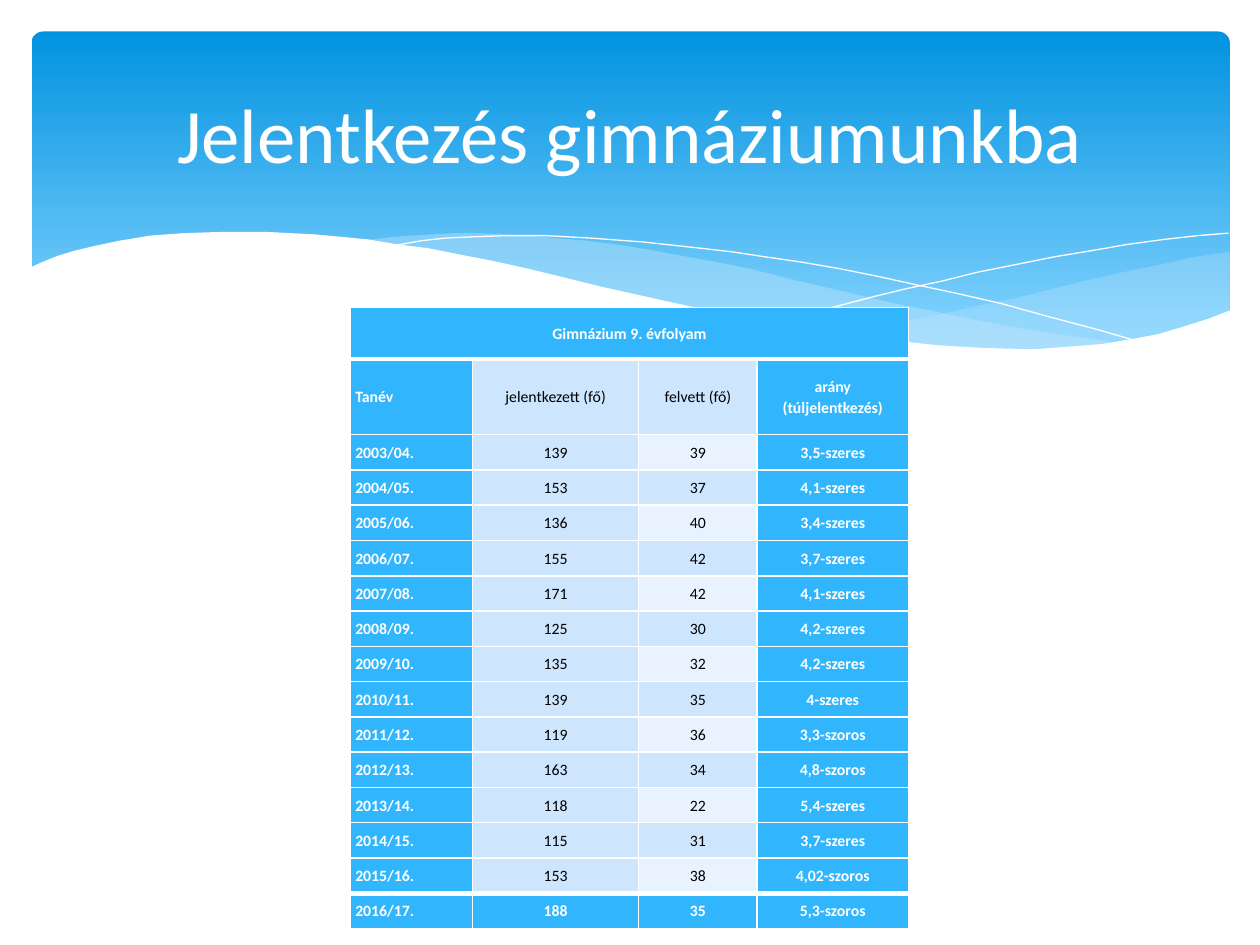
from lxml.etree import SubElement
from pptx import Presentation
from pptx.dml.color import RGBColor
from pptx.enum.shapes import MSO_SHAPE as SHAPE
from pptx.enum.text import MSO_ANCHOR as ANCHOR, PP_ALIGN as ALIGN
from pptx.oxml import parse_xml
from pptx.oxml.ns import nsdecls, qn
from pptx.util import Inches, Pt

COLORS = {
    "white": "FFFFFF", "black": "000000", "deep": "0293E0", "sky": "83D3FE",
    "wave": "C6E7FC", "accent": "31B6FD", "band": "CEE5FE", "pale": "E8F3FF",
}


def rgb(name):
    return RGBColor.from_string(COLORS[name])


def style_text(paragraph, align, color, **font_format):
    paragraph.alignment = align
    for run in paragraph.runs:
        run.font.color.rgb = rgb(color)
        for attribute, value in font_format.items():
            setattr(run.font, attribute, value)


prs = Presentation()
prs.slide_width, prs.slide_height = Inches(10), Inches(7.5)
slide = prs.slides.add_slide(prs.slide_layouts[5])

banner = slide.shapes.add_shape(SHAPE.ROUNDED_RECTANGLE, Inches(0.25), Inches(0.25), Inches(9.51), Inches(2.7))
banner.adjustments[0] = 0.034
banner.shadow.inherit = False
banner.line.fill.background()
banner.fill.gradient()
banner.fill.gradient_angle = 270
for stop, (position, color) in zip(banner.fill.gradient_stops, [(0, "deep"), (0.9, "sky")]):
    stop.position = position
    stop.color.rgb = rgb(color)

right_wave = [
    (9.75, 2), (9.48, 2.04), (9.21, 2.1), (8.91, 2.16), (8.61, 2.23), (8.32, 2.3), (8.05, 2.37),
    (7.79, 2.42), (7.53, 2.48), (7.29, 2.53), (7.06, 2.57), (6.83, 2.62), (6.61, 2.65), (6.91, 2.69),
    (7.19, 2.72), (7.45, 2.75), (7.69, 2.77), (8.03, 2.78), (8.35, 2.77), (8.63, 2.75), (8.81, 2.73),
    (8.97, 2.7), (9.13, 2.67), (9.28, 2.63), (9.42, 2.59), (9.63, 2.52), (9.76, 2.47), (9.76, 2),
]
middle_wave = [
    (8.93, 2.73), (8.66, 2.69), (8.37, 2.65), (8.07, 2.6), (7.75, 2.54), (7.41, 2.47), (7.06, 2.4),
    (6.68, 2.31), (6.29, 2.22), (5.98, 2.14), (5.69, 2.08), (5.41, 2.03), (5.14, 1.98), (4.89, 1.94),
    (4.65, 1.91), (4.42, 1.89), (4.2, 1.87), (3.99, 1.86), (3.8, 1.85), (3.61, 1.85), (3.44, 1.86),
    (3.28, 1.87), (3.13, 1.88), (2.86, 1.91), (3.23, 1.96), (3.62, 2.03), (4.04, 2.11), (4.49, 2.22),
    (4.91, 2.32), (5.3, 2.4), (5.66, 2.48), (6.01, 2.55), (6.34, 2.61), (6.65, 2.66), (6.95, 2.7),
    (7.22, 2.74), (7.48, 2.76), (7.73, 2.77), (7.96, 2.78), (8.38, 2.78), (8.67, 2.76), (8.84, 2.74),
]
falling_line = [
    (3.09, 1.95), (3.18, 1.94), (3.35, 1.91), (3.53, 1.89), (3.74, 1.88), (4.01, 1.87), (4.33, 1.87),
    (4.69, 1.89), (5.1, 1.92), (5.56, 1.97), (5.82, 2), (6.08, 2.04), (6.36, 2.08), (6.65, 2.13),
    (6.95, 2.19), (7.27, 2.26), (7.6, 2.33), (7.95, 2.41), (8.31, 2.51), (8.69, 2.61), (9.07, 2.72),
]
rising_line = [
    (6.13, 2.57), (6.53, 2.46), (6.95, 2.35), (7.2, 2.29), (7.48, 2.23), (7.76, 2.16), (8.06, 2.1),
    (8.36, 2.04), (8.66, 1.99), (8.95, 1.94), (9.24, 1.9), (9.51, 1.87), (9.75, 1.85),
]
white_wave = [
    (9.77, 2.46), (9.59, 2.53), (9.4, 2.59), (9.2, 2.65), (8.99, 2.69), (8.75, 2.73), (8.5, 2.75),
    (8.23, 2.77), (8.09, 2.77), (7.78, 2.76), (7.44, 2.74), (7.08, 2.7), (6.68, 2.65), (6.26, 2.58),
    (5.79, 2.5), (5.29, 2.39), (4.75, 2.27), (4.47, 2.2), (4.18, 2.13), (3.91, 2.07), (3.65, 2.02),
    (3.4, 1.97), (3.16, 1.94), (2.92, 1.9), (2.71, 1.88), (2.5, 1.86), (2.3, 1.85), (2.11, 1.84),
    (1.77, 1.84), (1.46, 1.85), (1.19, 1.87), (0.95, 1.91), (0.76, 1.95), (0.59, 1.99), (0.46, 2.03),
    (0.36, 2.07), (0.29, 2.1), (0.23, 2.13), (0.23, 3.29), (9.77, 3.29),
]
for points, color, opacity in [
    (right_wave, "wave", 29), (middle_wave, "wave", 40),
    (falling_line, None, None), (rising_line, None, None), (white_wave, "white", 100),
]:
    start, *rest = [(Inches(x), Inches(y)) for x, y in points]
    builder = slide.shapes.build_freeform(*start)
    builder.add_line_segments(rest, close=color is not None)
    curve = builder.convert_to_shape()
    curve.shadow.inherit = False
    if color:
        curve.line.fill.background()
        curve.fill.solid()
        curve.fill.fore_color.rgb = rgb(color)
        tint = curve.element.spPr.find(f"{qn('a:solidFill')}/{qn('a:srgbClr')}")
        SubElement(tint, qn("a:alpha"), val=str(opacity * 1000))
    else:
        curve.fill.background()
        curve.line.color.rgb = rgb("white")
        curve.line.width = Pt(0)

title = slide.shapes.title
title.element.getparent().append(title.element)
title.left, title.top, title.width, title.height = Inches(0.5), Inches(0.37), Inches(9), Inches(1.37)
title.text_frame.text = "Jelentkezés gimnáziumunkba"
title.text_frame.vertical_anchor = ANCHOR.MIDDLE
style_text(title.text_frame.paragraphs[0], ALIGN.CENTER, "white", name="Calibri", size=Pt(44))

rows = [
    ("Gimnázium 9. évfolyam", "", "", ""),
    ("Tanév", "jelentkezett (fő)", "felvett (fő)", "arány\n(túljelentkezés)"),
    ("2003/04.", "139", "39", "3,5-szeres"),
    ("2004/05.", "153", "37", "4,1-szeres"),
    ("2005/06.", "136", "40", "3,4-szeres"),
    ("2006/07.", "155", "42", "3,7-szeres"),
    ("2007/08.", "171", "42", "4,1-szeres"),
    ("2008/09.", "125", "30", "4,2-szeres"),
    ("2009/10.", "135", "32", "4,2-szeres"),
    ("2010/11.", "139", "35", "4-szeres"),
    ("2011/12.", "119", "36", "3,3-szoros"),
    ("2012/13.", "163", "34", "4,8-szoros"),
    ("2013/14.", "118", "22", "5,4-szeres"),
    ("2014/15.", "115", "31", "3,7-szeres"),
    ("2015/16.", "153", "38", "4,02-szoros"),
    ("2016/17.", "188", "35", "5,3-szoros"),
]
last = len(rows) - 1
admissions = slide.shapes.add_table(
    len(rows), 4, Inches(2.78), Inches(2.44), Inches(4.42), Inches(4.94)
).table
admissions.horz_banding = False
for column, width in zip(admissions.columns, [0.97, 1.32, 0.94, 1.2]):
    column.width = Inches(width)
for row, height in zip(admissions.rows, [0.41, 0.6] + [0.28] * (last - 1)):
    row.height = Inches(height)
admissions.cell(0, 0).merge(admissions.cell(0, 3))

cell_format = {
    "margin_left": Inches(0.04), "margin_right": Inches(0.04),
    "margin_top": 0, "margin_bottom": 0, "vertical_anchor": ANCHOR.MIDDLE,
}
for r, texts in enumerate(rows):
    for c, text in enumerate(texts):
        cell = admissions.cell(r, c)
        for attribute, value in cell_format.items():
            setattr(cell, attribute, value)
        strong = r in (0, last) or c in (0, 3)
        pale = c == 2 and r > 1 and r % 2 == 0
        cell.fill.solid()
        cell.fill.fore_color.rgb = rgb("accent" if strong else "pale" if pale else "band")
        if text:
            cell.text = text
        align = ALIGN.LEFT if c == 0 and r > 0 else ALIGN.CENTER
        for paragraph in cell.text_frame.paragraphs:
            paragraph.line_spacing = 1.07
            style_text(paragraph, align, "white" if strong else "black",
                       name="Calibri", size=Pt(9), bold=strong)
        top = 3 if r in (1, last) else 1
        bottom = 3 if r in (0, last - 1) else 1
        for i, (side, weight) in enumerate([("L", 1), ("R", 1), ("T", top), ("B", bottom)]):
            border = parse_xml(
                f'<a:ln{side} {nsdecls("a")} w="{Pt(weight)}"><a:solidFill>'
                f'<a:srgbClr val="{COLORS["white"]}"/></a:solidFill></a:ln{side}>'
            )
            cell._tc.get_or_add_tcPr().insert(i, border)

prs.save("out.pptx")
